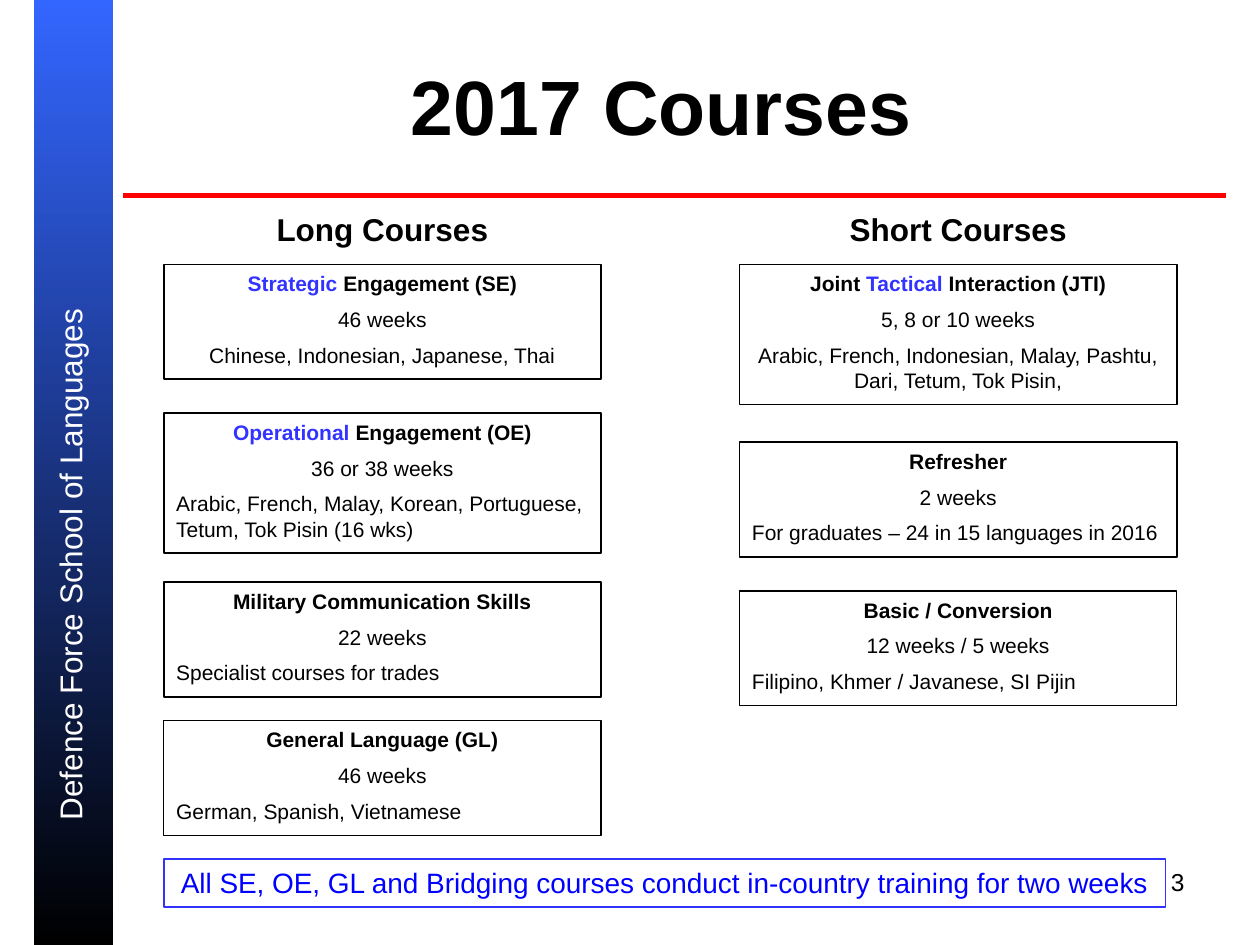
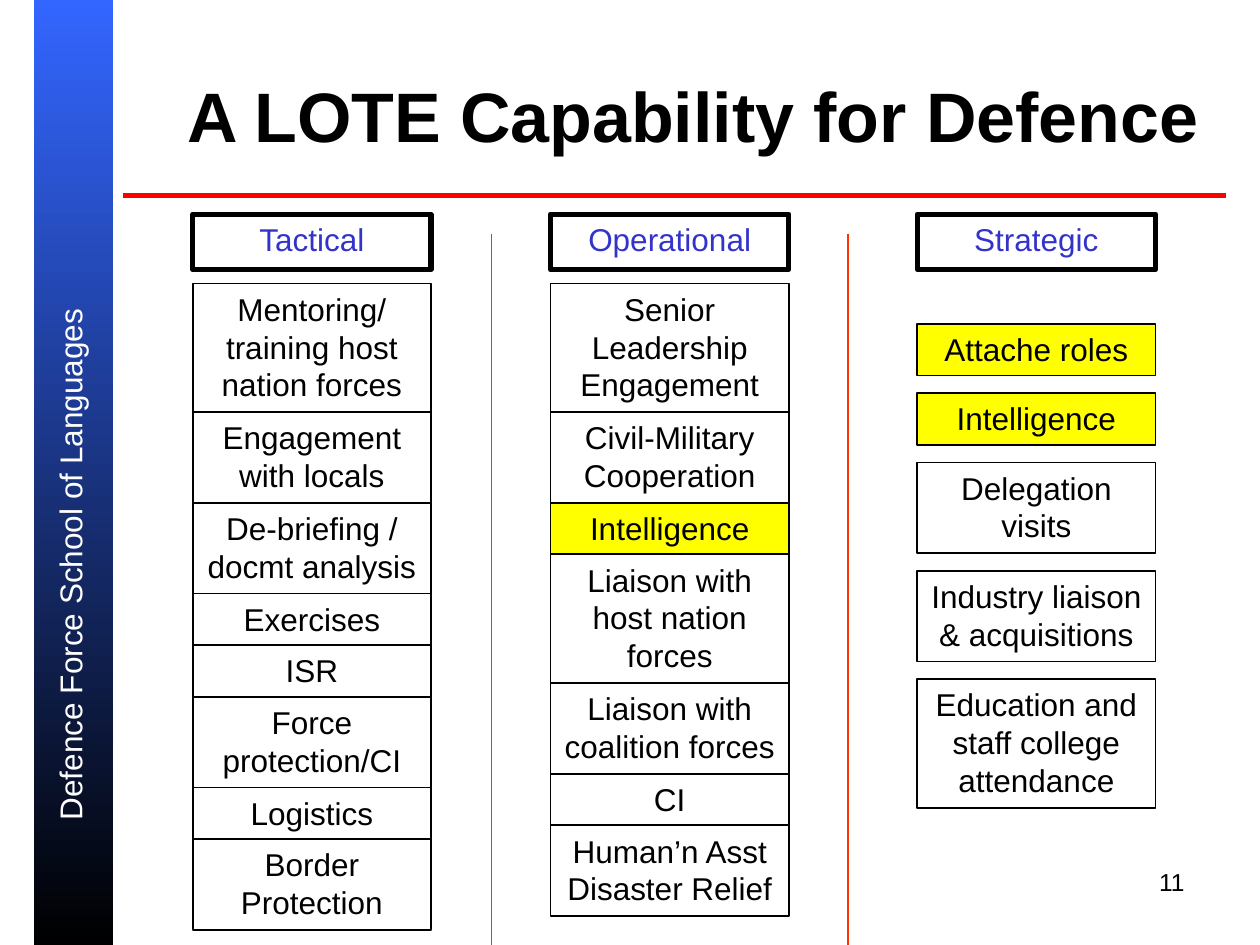
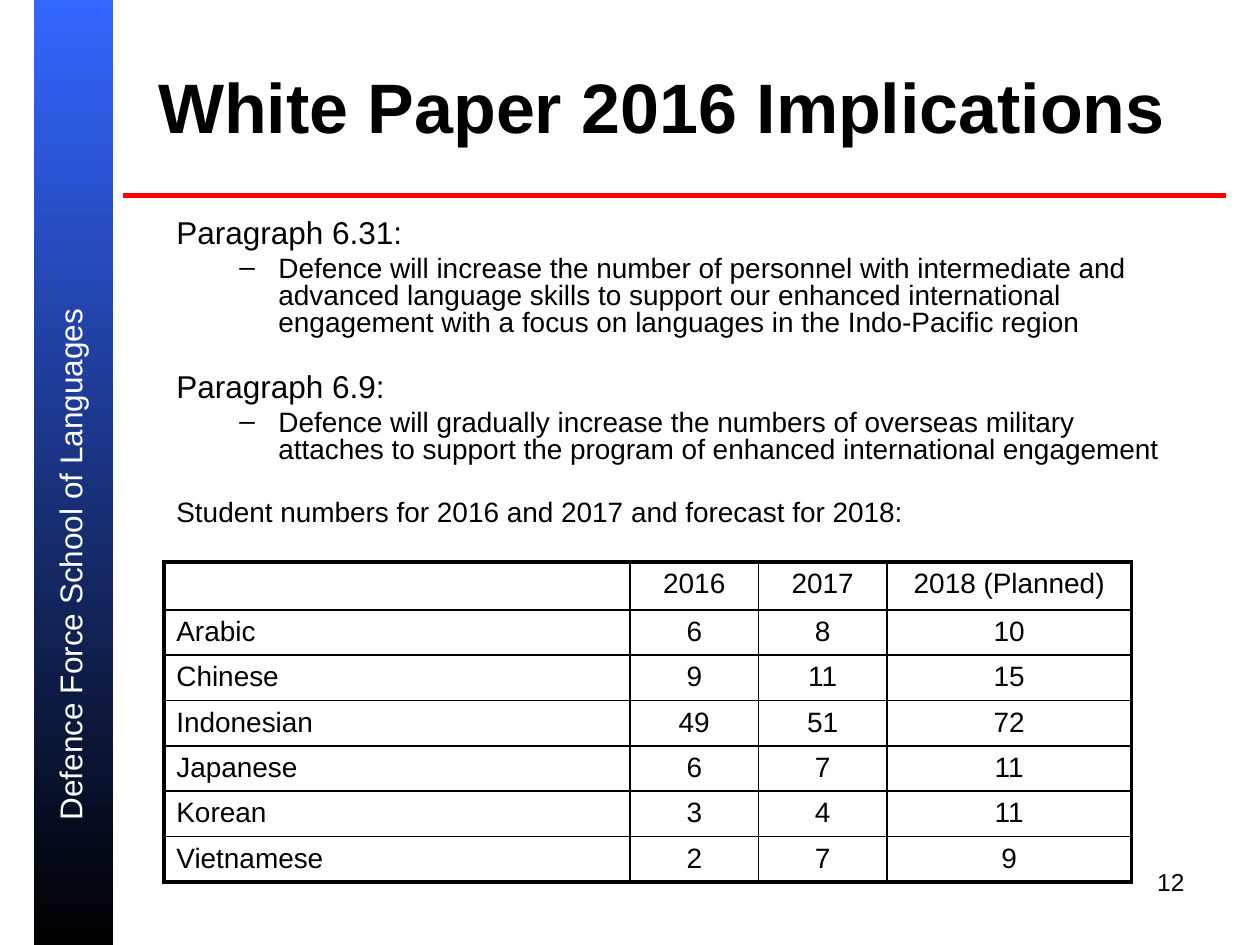
from lxml import etree
from pptx import Presentation
from pptx.dml.color import RGBColor
from pptx.enum.shapes import MSO_CONNECTOR, MSO_SHAPE
from pptx.enum.text import MSO_ANCHOR, MSO_AUTO_SIZE, PP_ALIGN
from pptx.oxml.ns import qn
from pptx.util import Inches, Pt

COLORS = {
    "black": "000000", "white": "FFFFFF", "band": "3366FF", "rule": "FF0000",
    "divider": "FF3300", "level": "3333FF", "heading": "3333CC",
    "note": "0000FF", "highlight": "FFFF00",
}
LEFT, CENTER, RIGHT = PP_ALIGN.LEFT, PP_ALIGN.CENTER, PP_ALIGN.RIGHT
SCHOOL = "Defence Force School of Languages"
TITLE_AT = (0.75, 0.21, 9, 1.25)

# Slide 1: left, top, height and line width, then name runs, length, details, alignment
COURSE_WIDTH = 3.47
LONG_LEFT, SHORT_LEFT = 1.3, 5.87
COURSES = [
    (LONG_LEFT, 2.1, 0.91, 1, [("Strategic", "level"), (" Engagement (SE)", "black")],
     "46 weeks", "Chinese, Indonesian, Japanese, Thai", CENTER),
    (LONG_LEFT, 3.28, 1.11, 1, [("Operational", "level"), (" Engagement (OE)", "black")],
     "36 or 38 weeks",
     "Arabic, French, Malay, Korean, Portuguese, Tetum, Tok Pisin (16 wks)", LEFT),
    (LONG_LEFT, 4.62, 0.91, 1, [("Military Communication Skills", "black")],
     "22 weeks", "Specialist courses for trades", LEFT),
    (LONG_LEFT, 5.72, 0.91, 0.75, [("General Language (GL)", "black")],
     "46 weeks", "German, Spanish, Vietnamese", LEFT),
    (SHORT_LEFT, 2.1, 1.11, 1,
     [("Joint ", "black"), ("Tactical", "level"), (" Interaction (JTI)", "black")],
     "5, 8 or 10 weeks",
     "Arabic, French, Indonesian, Malay, Pashtu, Dari, Tetum, Tok Pisin,", CENTER),
    (SHORT_LEFT, 3.51, 0.91, 1, [("Refresher", "black")],
     "2 weeks", "For graduates – 24 in 15 languages in 2016", LEFT),
    (SHORT_LEFT, 4.69, 0.91, 0.75, [("Basic / Conversion", "black")],
     "12 weeks / 5 weeks", "Filipino, Khmer / Javanese, SI Pijin", LEFT),
]

# Slide 2: heading, left, first top, gap, then tasks with their number of lines
TASK_WIDTH = 1.89
TASK_HEIGHTS = {1: 0.41, 2: 0.72, 3: 1.02}
HIGHLIGHTED = {"Intelligence", "Attache roles"}
CAPABILITIES = [
    ("Tactical", 1.53, 2.25, 0, [
        ("Mentoring/ training host nation forces", 3), ("Engagement with locals", 2),
        ("De-briefing / docmt analysis", 2), ("Exercises", 1), ("ISR", 1),
        ("Force protection/CI", 2), ("Logistics", 1), ("Border Protection", 2)]),
    ("Operational", 4.37, 2.25, 0, [
        ("Senior Leadership Engagement", 3), ("Civil-Military Cooperation", 2),
        ("Intelligence", 1), ("Liaison with host nation forces", 3),
        ("Liaison with coalition forces", 2), ("CI", 1),
        ("Human’n Asst Disaster Relief", 2)]),
    ("Strategic", 7.28, 2.57, 0.14, [
        ("Attache roles", 1), ("Intelligence", 1), ("Delegation visits", 2),
        ("Industry liaison & acquisitions", 2),
        ("Education and staff college attendance", 3)]),
]

# Slide 3: text, is it a dashed point, size, space before
IMPLICATIONS = [
    ("Paragraph 6.31:", False, 18, 0),
    ("Defence will increase the number of personnel with intermediate and advanced "
     "language skills to support our enhanced international engagement with a focus "
     "on languages in the Indo-Pacific region", True, 16, 3.5),
    ("Paragraph 6.9:", False, 18, 21),
    ("Defence will gradually increase the numbers of overseas military attaches to "
     "support the program of enhanced international engagement", True, 16, 3.5),
    ("Student numbers for 2016 and 2017 and forecast for 2018:", False, 16, 21),
]
STUDENT_COLUMNS = [3.7, 1.02, 1.02, 1.94]
STUDENTS = [
    ("", "2016", "2017", "2018 (Planned)"),
    ("Arabic", 6, 8, 10),
    ("Chinese", 9, 11, 15),
    ("Indonesian", 49, 51, 72),
    ("Japanese", 6, 7, 11),
    ("Korean", 3, 4, 11),
    ("Vietnamese", 2, 7, 9),
]


def rgb(name):
    return RGBColor.from_string(COLORS[name])


def inches(values):
    return [Inches(v) for v in values]


def add_run(p, text, size, color="black", bold=False):
    r = p.add_run()
    r.text = text
    for name, value in {"name": "Arial", "size": Pt(size), "bold": bold}.items():
        setattr(r.font, name, value)
    r.font.color.rgb = rgb(color)


def set_frame(tf, anchor=MSO_ANCHOR.TOP):
    frame = {"word_wrap": True, "auto_size": MSO_AUTO_SIZE.NONE, "vertical_anchor": anchor}
    for name, value in frame.items():
        setattr(tf, name, value)


def add_text(s, text, at, size, align=CENTER, color="black", bold=False):
    tb = s.shapes.add_textbox(*inches(at))
    set_frame(tb.text_frame)
    p = tb.text_frame.paragraphs[0]
    p.alignment = align
    add_run(p, text, size, color, bold)
    return tb


def add_box(s, at, line_width, line="black", fill=None):
    """Add an outlined rectangle and return its text frame."""
    sp = s.shapes.add_shape(MSO_SHAPE.RECTANGLE, *inches(at))
    sp.shadow.inherit = False
    if fill:
        sp.fill.solid()
        sp.fill.fore_color.rgb = rgb(fill)
    else:
        sp.fill.background()
    sp.line.color.rgb = rgb(line)
    sp.line.width = Pt(line_width)
    set_frame(sp.text_frame)
    return sp.text_frame


def add_label_box(s, text, at, size, line_width=1, line="black", color="black", fill=None):
    p = add_box(s, at, line_width, line, fill).paragraphs[0]
    p.alignment = CENTER
    add_run(p, text, size, color)


def add_line(s, start, end, color, width):
    cn = s.shapes.add_connector(MSO_CONNECTOR.STRAIGHT, *inches(start + end))
    cn.line.color.rgb = rgb(color)
    cn.line.width = Pt(width)
    etree.SubElement(cn._element.spPr, qn("a:effectLst"))


def add_side_band(s):
    sp = s.shapes.add_shape(MSO_SHAPE.RECTANGLE, *inches((0.27, 0, 0.63, 7.5)))
    sp.shadow.inherit = False
    sp.line.fill.background()
    sp.fill.gradient()
    sp.fill.gradient_angle = 270
    for stop, color, position in zip(sp.fill.gradient_stops, ("band", "black"), (0, 1)):
        stop.color.rgb = rgb(color)
        stop.position = position
    add_text(s, SCHOOL, (-2.46, 4.28, 6.03, 0.4), 18, color="white").rotation = 270


def new_slide(prs, layout, title, number, size=40, title_at=TITLE_AT):
    """Add a slide with the title, side band, rule and page number."""
    s = prs.slides.add_slide(prs.slide_layouts.get_by_name(layout))
    place(s.shapes.title, title_at)
    tf = s.shapes.title.text_frame
    set_frame(tf, MSO_ANCHOR.MIDDLE)
    tf.paragraphs[0].alignment = CENTER
    add_run(tf.paragraphs[0], title, size, bold=True)
    add_side_band(s)
    add_line(s, (0.98, 1.55), (9.73, 1.55), "rule", 3)
    add_text(s, number, (7.17, 6.83, 2.33, 0.52), 14, RIGHT)
    return s


def place(sp, at):
    for name, value in zip(("left", "top", "width", "height"), inches(at)):
        setattr(sp, name, value)


def add_course(s, left, top, height, line_width, name_runs, length, details, align):
    tf = add_box(s, (left, top, COURSE_WIDTH, height), line_width)
    p = tf.paragraphs[0]
    p.alignment = CENTER
    for text, color in name_runs:
        add_run(p, text, 12, color, True)
    for text, alignment in ((length, CENTER), (details, align)):
        p = tf.add_paragraph()
        p.alignment = alignment
        p.space_before = Pt(6)
        add_run(p, text, 12)


def add_capability(s, heading, left, top, gap, tasks):
    add_label_box(s, heading, (left, 1.7, TASK_WIDTH, 0.44), 18, 3, color="heading")
    for task, lines in tasks:
        height = TASK_HEIGHTS[lines]
        fill = "highlight" if task in HIGHLIGHTED else None
        add_label_box(s, task, (left, top, TASK_WIDTH, height), 18, fill=fill)
        top += height + gap


def set_bullet(p, dashed):
    pPr = p._p.get_or_add_pPr()
    margin, indent = (0.81, -0.31) if dashed else (0.38, -0.38)
    pPr.set("marL", str(Inches(margin)))
    pPr.set("indent", str(Inches(indent)))
    if dashed:
        p.level = 1
        etree.SubElement(pPr, qn("a:buChar"), char="–")
    else:
        etree.SubElement(pPr, qn("a:buNone"))


def fill_body(body, at, items):
    place(body, at)
    tf = body.text_frame
    set_frame(tf)
    for i, (text, dashed, size, before) in enumerate(items):
        p = tf.add_paragraph() if i else tf.paragraphs[0]
        set_bullet(p, dashed)
        p.alignment = LEFT
        p.line_spacing = 0.8
        p.space_before = Pt(before)
        add_run(p, text, size)


def set_borders(cell, widths):
    """Draw the left, right, top and bottom borders in the given widths."""
    tcPr = cell._tc.get_or_add_tcPr()
    for i, (side, width) in enumerate(zip("LRTB", widths)):
        ln = etree.Element(qn(f"a:ln{side}"), w=str(Pt(width)))
        fill = etree.SubElement(ln, qn("a:solidFill"))
        etree.SubElement(fill, qn("a:srgbClr"), val=COLORS["black"])
        tcPr.insert(i, ln)


def add_table(s, rows, columns, left, top, row_height):
    n_rows, n_cols = len(rows), len(columns)
    at = (left, top, sum(columns), row_height * n_rows)
    table = s.shapes.add_table(n_rows, n_cols, *inches(at)).table
    table.first_row = table.horz_banding = False
    for column, width in zip(table.columns, columns):
        column.width = Inches(width)
    for i, values in enumerate(rows):
        for j, value in enumerate(values):
            cell = table.cell(i, j)
            cell.fill.background()
            outer = (j == 0, j == n_cols - 1, i == 0, i == n_rows - 1)
            set_borders(cell, [2.25 if edge else 1 for edge in outer])
            p = cell.text_frame.paragraphs[0]
            p.alignment = CENTER if j else LEFT
            add_run(p, str(value), 16)


def build_courses(prs):
    s = new_slide(prs, "Title Only", "2017 Courses", "3", 44)
    for heading, left in (("Long Courses", LONG_LEFT), ("Short Courses", SHORT_LEFT)):
        add_text(s, heading, (left, 1.62, COURSE_WIDTH, 0.4), 18, bold=True)
    for course in COURSES:
        add_course(s, *course)
    add_label_box(
        s, "All SE, OE, GL and Bridging courses conduct in-country training for two weeks",
        (1.3, 6.82, 7.95, 0.38), 16, line="level", color="note")


def build_capability(prs):
    s = new_slide(prs, "Title Only", "A LOTE Capability for Defence", "11",
                  title_at=(1, 0.28, 9, 1.25))
    for capability in CAPABILITIES:
        add_capability(s, *capability)
    for x in (3.9, 6.73):
        add_line(s, (x, 1.86), (x, 7.5), "divider", 0.75)


def build_implications(prs):
    s = new_slide(prs, "Title and Content", "White Paper 2016 Implications", "12")
    fill_body(s.placeholders[1], (1.3, 1.7, 8.19, 2.68), IMPLICATIONS)
    add_table(s, STUDENTS, STUDENT_COLUMNS, 1.3, 4.46, 0.36)


def main():
    prs = Presentation()
    prs.slide_width, prs.slide_height = Inches(10), Inches(7.5)
    build_courses(prs)
    build_capability(prs)
    build_implications(prs)
    prs.save("out.pptx")


if __name__ == "__main__":
    main()
